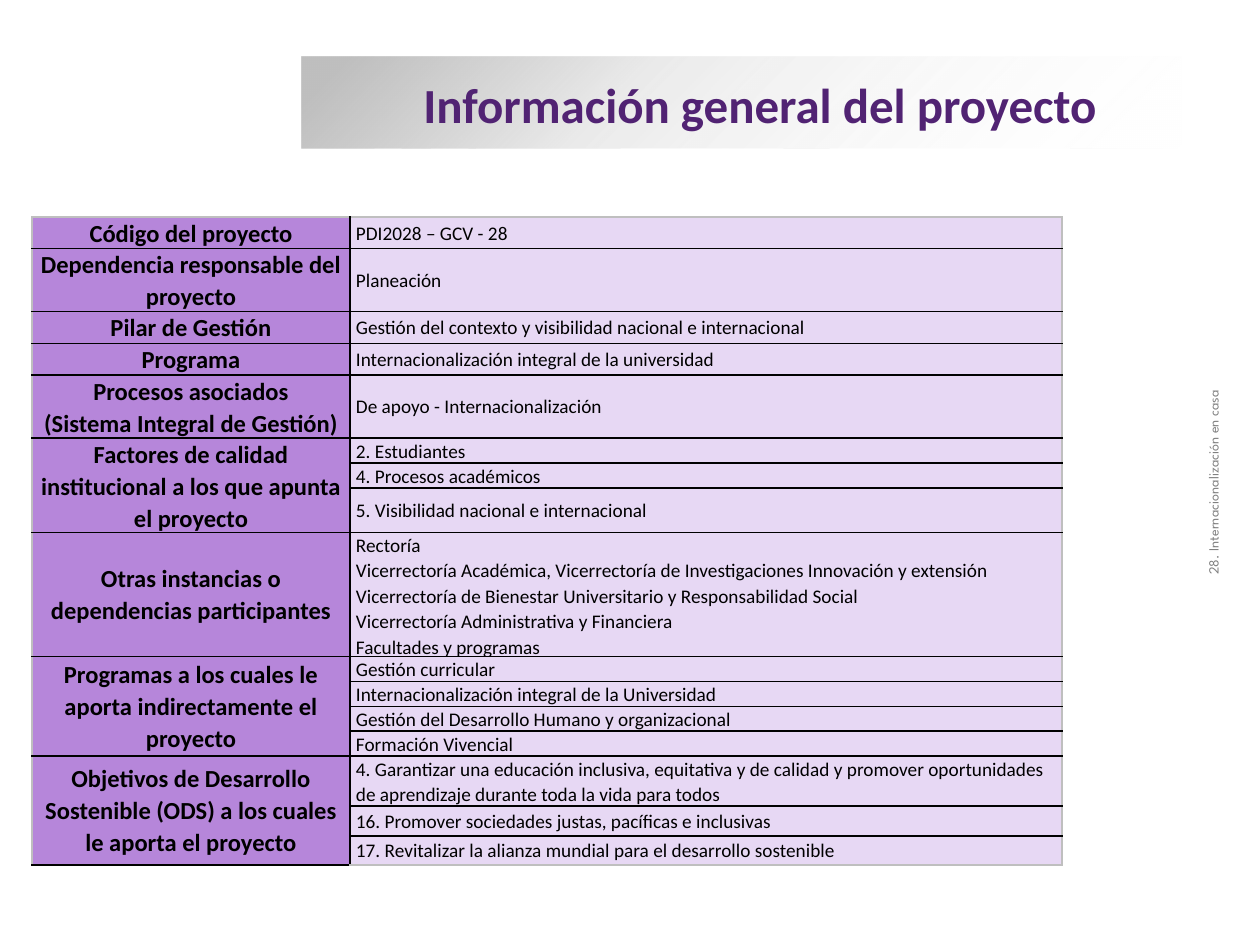
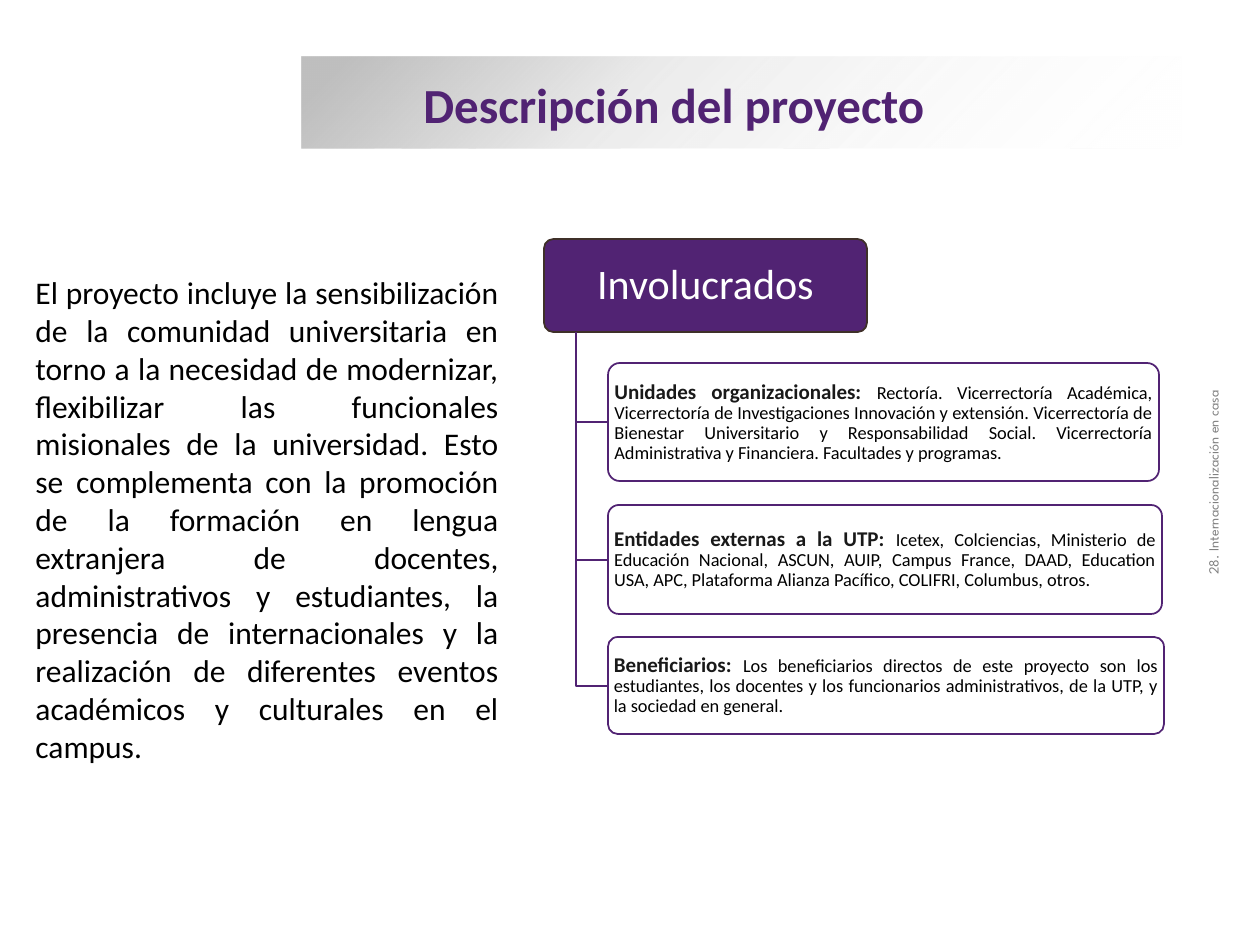
from dataclasses import dataclass

import lxml.etree
import pptx
import pptx.dml.color
import pptx.enum.shapes
import pptx.enum.text
import pptx.oxml
import pptx.oxml.ns
import pptx.util

EMU_PER_PX = 914400 / 126
PURPLE, LILAC, PALE = "512373", "B686DA", "E7D8F4"
BLACK, WHITE, INK = "000000", "FFFFFF", "191919"
SILVER, GREY, BROWN = "BFBFBF", "808080", "3F3029"
ALIGN = pptx.enum.text.PP_ALIGN
ANCHOR = pptx.enum.text.MSO_ANCHOR
SHAPE = pptx.enum.shapes.MSO_SHAPE
qn = pptx.oxml.ns.qn


@dataclass(frozen=True)
class Box:
    left: int
    top: int
    width: int
    height: int

    def emu(self) -> list[pptx.util.Emu]:
        return [px(n) for n in (self.left, self.top, self.width, self.height)]


@dataclass(frozen=True)
class Detail:
    text: str
    height: int


@dataclass(frozen=True)
class Topic:
    label: str
    details: tuple[Detail, ...]


@dataclass(frozen=True)
class Party:
    title: str
    text: str
    box: Box


BAND = Box(302, 57, 880, 91)
TITLE = Box(411, 68, 781, 72)
FOOTER = Box(917, 459, 610, 47)
TABLE = Box(32, 217, 1030, 646)
LABEL_WIDTH = 318
DESCRIPTION = Box(23, 267, 488, 509)
HEAD = Box(544, 239, 323, 93)
TRUNK = 576

TOPICS = (
    Topic("Código del proyecto", (Detail("PDI2028 – GCV - 28", 31),)),
    Topic("Dependencia responsable del proyecto", (Detail("Planeación", 63),)),
    Topic("Pilar de Gestión", (
        Detail("Gestión del contexto y visibilidad nacional e internacional", 32),)),
    Topic("Programa", (Detail("Internacionalización integral de la universidad", 31),)),
    Topic("Procesos asociados\n(Sistema Integral de Gestión)", (
        Detail("De apoyo - Internacionalización", 63),)),
    Topic("Factores de calidad institucional a los que apunta el proyecto", (
        Detail("2. Estudiantes", 25),
        Detail("4. Procesos académicos", 25),
        Detail("5. Visibilidad nacional e internacional", 44))),
    Topic("Otras instancias o dependencias participantes", (
        Detail("Rectoría\n"
               "Vicerrectoría Académica, Vicerrectoría de Investigaciones Innovación y extensión\n"
               "Vicerrectoría de Bienestar Universitario y Responsabilidad Social\n"
               "Vicerrectoría Administrativa y Financiera\n"
               "Facultades y programas", 124),)),
    Topic("Programas a los cuales le aporta indirectamente el proyecto", (
        Detail("Gestión curricular", 25),
        Detail("Internacionalización integral de la Universidad", 25),
        Detail("Gestión del Desarrollo Humano y organizacional", 24),
        Detail("Formación Vivencial", 25))),
    Topic("Objetivos de Desarrollo Sostenible (ODS) a los cuales le aporta el proyecto", (
        Detail("4. Garantizar una educación inclusiva, equitativa y de calidad y promover "
               "oportunidades de aprendizaje durante toda la vida para todos", 50),
        Detail("16. Promover sociedades justas, pacíficas e inclusivas", 30),
        Detail("17. Revitalizar la alianza mundial para el desarrollo sostenible", 29))),
)

PARTIES = (
    Party("Unidades organizacionales: ",
          "Rectoría. Vicerrectoría Académica, Vicerrectoría de Investigaciones Innovación y "
          "extensión. Vicerrectoría de Bienestar Universitario y Responsabilidad Social. "
          "Vicerrectoría Administrativa y Financiera. Facultades y programas.",
          Box(608, 363, 551, 118)),
    Party("Entidades externas a la UTP: ",
          "Icetex, Colciencias, Ministerio de Educación Nacional, ASCUN, AUIP, Campus France, "
          "DAAD, Education USA, APC, Plataforma Alianza Pacífico, COLIFRI, Columbus, otros.",
          Box(608, 505, 554, 109)),
    Party("Beneficiarios: ",
          "Los beneficiarios directos de este proyecto son los estudiantes, los docentes y los "
          "funcionarios administrativos, de la UTP, y la sociedad en general.",
          Box(608, 637, 556, 97)),
)

DESCRIPTION_TEXT = (
    "El proyecto incluye la sensibilización de la comunidad universitaria en torno a la "
    "necesidad de modernizar, flexibilizar las funcionales misionales de la universidad. Esto "
    "se complementa con la promoción de la formación en lengua extranjera de docentes, "
    "administrativos y estudiantes, la presencia de internacionales y la realización de "
    "diferentes eventos académicos y culturales en el campus."
)


def px(length: float) -> pptx.util.Emu:
    return pptx.util.Emu(round(length * EMU_PER_PX))


def rgb(color: str) -> pptx.dml.color.RGBColor:
    return pptx.dml.color.RGBColor.from_string(color)


def write(frame, text: str, *, size: float, color: str = BLACK, font: str = "Calibri",
          bold: bool = False, align=ALIGN.LEFT, spacing: float = 1.0,
          lead: str = "", lead_size: float = 12, lead_color: str = INK) -> None:
    frame.word_wrap = True
    for index, line in enumerate(text.split("\n")):
        paragraph = frame.paragraphs[0] if index == 0 else frame.add_paragraph()
        paragraph.alignment = align
        paragraph.line_spacing = spacing
        parts = [(line, size, color, bold)]
        if lead and index == 0:
            parts.insert(0, (lead, lead_size, lead_color, True))
        for words, points, ink, weight in parts:
            run = paragraph.add_run()
            run.text = words
            run.font.name = font
            run.font.size = pptx.util.Pt(points)
            run.font.bold = weight
            run.font.color.rgb = rgb(ink)


def add_text_box(slide, box: Box, text: str, *, anchor=ANCHOR.TOP, **text_format):
    shape = slide.shapes.add_textbox(*box.emu())
    shape.text_frame.vertical_anchor = anchor
    write(shape.text_frame, text, **text_format)
    return shape


def add_band(slide) -> None:
    band = slide.shapes.add_shape(SHAPE.RECTANGLE, *BAND.emu())
    band.shadow.inherit = False
    band.line.fill.background()
    band.fill.gradient()
    band.fill.gradient_angle = 315
    stops = next(band.element.iter(qn("a:gsLst")))
    for stop in list(stops):
        stops.remove(stop)
    for position, color, alpha in ((5, SILVER, 100), (37, SILVER, 31), (100, WHITE, 0)):
        stop = lxml.etree.SubElement(stops, qn("a:gs"), pos=str(position * 1000))
        tint = lxml.etree.SubElement(stop, qn("a:srgbClr"), val=color)
        lxml.etree.SubElement(tint, qn("a:alpha"), val=str(alpha * 1000))


def add_base_slide(presentation, title: str):
    slide = presentation.slides.add_slide(presentation.slide_layouts[6])
    add_band(slide)
    add_text_box(slide, TITLE, title, anchor=ANCHOR.MIDDLE, size=28, color=PURPLE, bold=True)
    footer = add_text_box(slide, FOOTER, "28. Internacionalización en casa", size=8,
                          color=GREY, font="League Spartan", align=ALIGN.CENTER)
    footer.rotation = 270
    return slide


def set_borders(cell, colors: dict[str, str]) -> None:
    properties = cell._tc.get_or_add_tcPr()
    for index, (side, color) in enumerate(colors.items()):
        line = properties.makeelement(qn(f"a:{side}"), {"w": "12700"})
        fill = lxml.etree.SubElement(line, qn("a:solidFill"))
        lxml.etree.SubElement(fill, qn("a:srgbClr"), val=color)
        properties.insert(index, line)


def fill_cell(cell, text: str, *, fill: str, inset: int, **text_format) -> None:
    cell.fill.solid()
    cell.fill.fore_color.rgb = rgb(fill)
    cell.vertical_anchor = ANCHOR.MIDDLE
    cell.margin_left = cell.margin_right = px(inset)
    cell.margin_top = cell.margin_bottom = 0
    if text:
        write(cell.text_frame, text, spacing=1.07, **text_format)


def add_topic_table(slide) -> None:
    row_count = sum(len(topic.details) for topic in TOPICS)
    table = slide.shapes.add_table(row_count, 2, *TABLE.emu()).table
    table.first_row = table.horz_banding = False
    table.columns[0].width = px(LABEL_WIDTH)
    table.columns[1].width = px(TABLE.width - LABEL_WIDTH)
    row = 0
    for topic in TOPICS:
        first = row
        for detail in topic.details:
            table.rows[row].height = px(detail.height)
            fill_cell(table.cell(row, 0), topic.label if row == first else "", fill=LILAC,
                      inset=5, size=14, bold=True, align=ALIGN.CENTER)
            fill_cell(table.cell(row, 1), detail.text, fill=PALE, inset=6, size=11)
            for column in range(2):
                set_borders(table.cell(row, column), {
                    "lnL": BLACK if column else SILVER,
                    "lnR": SILVER if column else BLACK,
                    "lnT": BLACK if row else SILVER,
                    "lnB": BLACK if row < row_count - 1 else SILVER,
                })
            row += 1
        if row - first > 1:
            table.cell(first, 0).merge(table.cell(row - 1, 0))


def add_card(slide, box: Box, text: str, *, fill: str, line: str, **text_format) -> None:
    card = slide.shapes.add_shape(SHAPE.ROUNDED_RECTANGLE, *box.emu())
    card.adjustments[0] = 0.1
    card.shadow.inherit = False
    card.fill.solid()
    card.fill.fore_color.rgb = rgb(fill)
    card.line.color.rgb = rgb(line)
    card.line.width = pptx.util.Pt(1)
    frame = card.text_frame
    frame.vertical_anchor = ANCHOR.MIDDLE
    frame.margin_left = frame.margin_right = px(3)
    frame.margin_top = frame.margin_bottom = px(2)
    write(frame, text, spacing=0.9, **text_format)


def add_branch(slide, box: Box) -> None:
    middle = box.top + box.height / 2
    builder = slide.shapes.build_freeform(TRUNK, HEAD.top + HEAD.height, scale=EMU_PER_PX)
    builder.add_line_segments([(TRUNK, middle), (box.left, middle)], close=False)
    branch = builder.convert_to_shape()
    branch.shadow.inherit = False
    branch.fill.background()
    branch.line.color.rgb = rgb(PURPLE)
    branch.line.width = pptx.util.Pt(1)


def main() -> None:
    presentation = pptx.Presentation()
    presentation.slide_width = px(1260)
    presentation.slide_height = px(945)

    add_topic_table(add_base_slide(presentation, "Información general del proyecto"))

    slide = add_base_slide(presentation, "Descripción del proyecto")
    add_text_box(slide, DESCRIPTION, DESCRIPTION_TEXT, size=18, align=ALIGN.JUSTIFY)
    add_card(slide, HEAD, "Involucrados", fill=PURPLE, line=BROWN, size=24, color=WHITE,
             align=ALIGN.CENTER)
    for party in PARTIES:
        add_branch(slide, party.box)
        add_card(slide, party.box, party.text, fill=WHITE, line=PURPLE, size=10.5,
                 align=ALIGN.JUSTIFY, lead=party.title)

    presentation.save("out.pptx")


if __name__ == "__main__":
    main()
